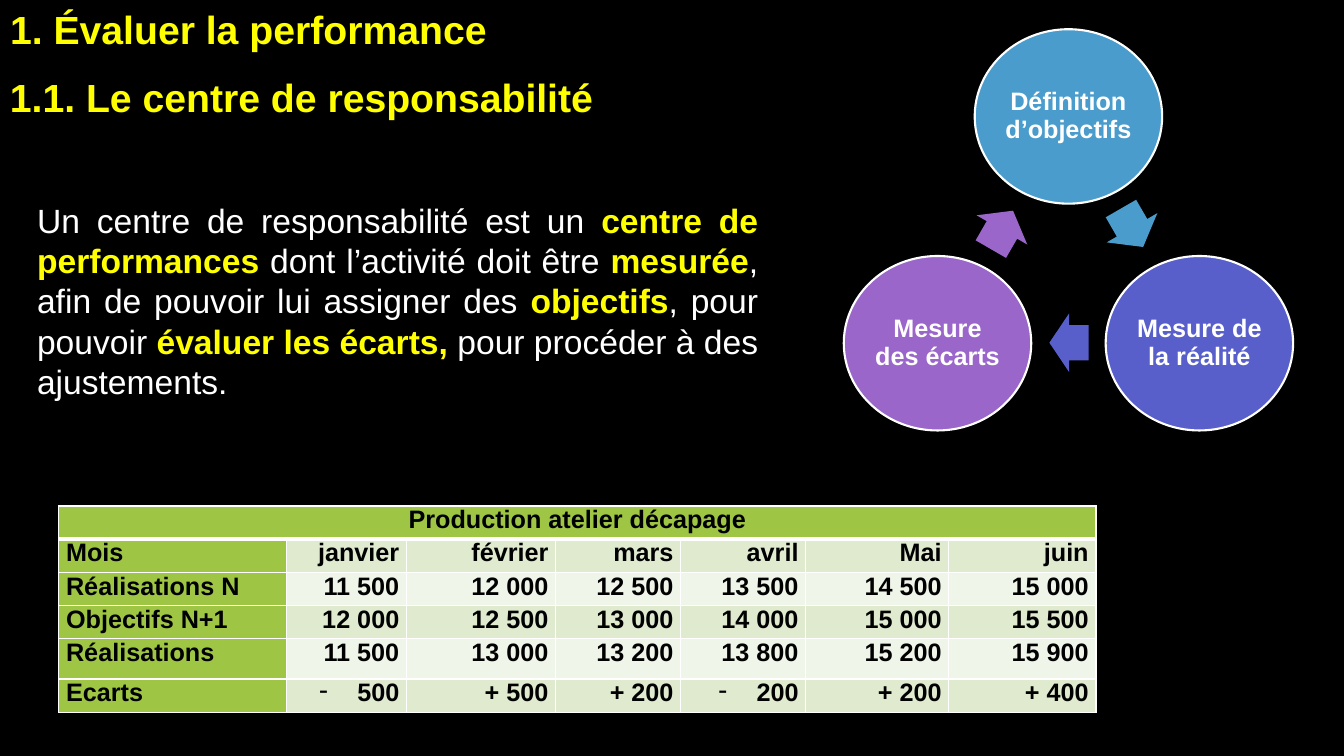
"""Build the slide on responsibility centres and their performance cycle."""
import math

from lxml import etree
from pptx import Presentation
from pptx.dml.color import RGBColor
from pptx.enum.shapes import MSO_SHAPE
from pptx.enum.text import MSO_ANCHOR, MSO_AUTO_SIZE, PP_ALIGN
from pptx.oxml.ns import qn
from pptx.util import Pt

ELLIPSE, ARROW = MSO_SHAPE.OVAL, MSO_SHAPE.RIGHT_ARROW
TOP, MIDDLE = MSO_ANCHOR.TOP, MSO_ANCHOR.MIDDLE
LEFT, CENTER = PP_ALIGN.LEFT, PP_ALIGN.CENTER
RIGHT, JUSTIFY = PP_ALIGN.RIGHT, PP_ALIGN.JUSTIFY
NO_AUTOFIT = MSO_AUTO_SIZE.NONE

BLACK = RGBColor(0x00, 0x00, 0x00)
WHITE = RGBColor(0xFF, 0xFF, 0xFF)
YELLOW = RGBColor(0xFF, 0xFF, 0x00)
BLUE = RGBColor(0x4A, 0x9C, 0xCC)
INDIGO = RGBColor(0x58, 0x5F, 0xCB)
PURPLE = RGBColor(0x9A, 0x66, 0xCA)
GREEN = RGBColor(0x9E, 0xC5, 0x44)
BANDS = RGBColor(0xF0, 0xF5, 0xE9), RGBColor(0xDF, 0xEA, 0xCF)

DEFINITION = [
    ("Un centre de responsabilité est un ", False),
    ("centre de performances ", True),
    ("dont l’activité doit être ", False),
    ("mesurée", True),
    (", afin de pouvoir lui assigner des ", False),
    ("objectifs", True),
    (", pour pouvoir ", False),
    ("évaluer les écarts, ", True),
    ("pour procéder à des ajustements.", False),
]

CYCLE_CENTER, CYCLE_RADIUS = (763.2, 191.2), 108
STAGE_SIZE = (133.9, 124.6)
STAGES = [
    ("Définition d’objectifs", BLUE, (808.6, 162.7), 31.7),
    ("Mesure de la réalité", INDIGO, (763.6, 244.8), 28.1),
    ("Mesure des écarts", PURPLE, (715.7, 164.2), 31.7),
]
ARROW_HEIGHT = 41.8

COLUMN_WIDTHS = [162.7, 85.7, 106.6, 89.3, 89.3, 102.2, 105.1]
ROW_HEIGHTS = [23.7, 23.7, 23.7, 23.7, 28.9, 23.7]
TABLE_TITLE = "Production atelier décapage"
PRODUCTION = [
    ["Mois", "janvier", "février", "mars", "avril", "Mai", "juin"],
    ["Réalisations N", "11 500", "12 000", "12 500", "13 500", "14 500", "15 000"],
    ["Objectifs N+1", "12 000", "12 500", "13 000", "14 000", "15 000", "15 500"],
    ["Réalisations", "11 500", "13 000", "13 200", "13 800", "15 200", "15 900"],
    ["Ecarts", "- 500", "+ 500", "+ 200", "- 200", "+ 200", "+ 400"],
]


def add_span(para, text, size, color, bold=True):
    """Append one formatted run to a paragraph."""
    span = para.add_run()
    span.text = text
    span.font.name = "Arial"
    span.font.size = Pt(size)
    span.font.bold = bold
    span.font.color.rgb = color


def place(shape, left, top, width, height):
    """Set the position and size of a shape."""
    shape.left, shape.top = Pt(left), Pt(top)
    shape.width, shape.height = Pt(width), Pt(height)


def write_heading(box, text):
    """Write a yellow heading at the top left of a box."""
    frame = box.text_frame
    frame.word_wrap = True
    frame.auto_size = NO_AUTOFIT
    frame.vertical_anchor = TOP
    para = frame.paragraphs[0]
    para.alignment = LEFT
    add_span(para, text, 28, YELLOW)


def add_definition(page):
    """Add the justified paragraph with its highlighted terms."""
    box = page.shapes.add_textbox(Pt(19.4), Pt(139), Pt(529.2), Pt(152.6))
    box.text_frame.word_wrap = True
    para = box.text_frame.paragraphs[0]
    para.alignment = JUSTIFY
    para.space_before = para.space_after = Pt(6)
    for text, key in DEFINITION:
        add_span(para, text, 24, YELLOW if key else WHITE, key)


def add_filled_shape(page, kind, center, size, color):
    """Add a plain filled preset shape around a centre point."""
    (x, y), (width, height) = center, size
    shape = page.shapes.add_shape(
        kind, Pt(x - width / 2), Pt(y - height / 2), Pt(width), Pt(height))
    shape.shadow.inherit = False
    shape.fill.solid()
    shape.fill.fore_color.rgb = color
    shape.line.fill.background()
    return shape


def add_stage(page, text, center, color):
    """Add one labelled ellipse of the cycle."""
    stage = add_filled_shape(page, ELLIPSE, center, STAGE_SIZE, color)
    stage.line.color.rgb = WHITE
    stage.line.width = Pt(1.5)
    frame = stage.text_frame
    frame.word_wrap = True
    frame.vertical_anchor = MIDDLE
    frame.margin_left = frame.margin_right = Pt(0)
    frame.margin_top = frame.margin_bottom = Pt(2.4)
    para = frame.paragraphs[0]
    para.alignment = CENTER
    para.line_spacing = 0.9
    add_span(para, text, 18, WHITE)


def add_cycle(page):
    """Add the three stages on a circle and the arrows between them."""
    for index, (text, color, arrow_center, arrow_width) in enumerate(STAGES):
        angle = math.radians(120 * index - 90)
        center = (CYCLE_CENTER[0] + CYCLE_RADIUS * math.cos(angle),
                  CYCLE_CENTER[1] + CYCLE_RADIUS * math.sin(angle))
        add_stage(page, text, center, color)
        arrow = add_filled_shape(
            page, ARROW, arrow_center, (arrow_width, ARROW_HEIGHT), color)
        arrow.adjustments[0], arrow.adjustments[1] = 0.6, 0.5
        arrow.rotation = 60 + 120 * index


def set_borders(cell, top, bottom):
    """Draw white cell borders, with given top and bottom widths."""
    properties = cell._tc.get_or_add_tcPr()
    for tag, width in (("lnL", 1), ("lnR", 1), ("lnT", top), ("lnB", bottom)):
        line = etree.SubElement(properties, qn("a:" + tag), w=str(Pt(width)))
        fill = etree.SubElement(line, qn("a:solidFill"))
        etree.SubElement(fill, qn("a:srgbClr"), val=str(WHITE))


def set_dash_bullet(para):
    """Give a paragraph a hanging dash bullet."""
    properties = para._p.get_or_add_pPr()
    properties.set("marL", str(Pt(27)))
    properties.set("indent", str(Pt(-27)))
    etree.SubElement(properties, qn("a:buFontTx"))
    etree.SubElement(properties, qn("a:buChar"), char="-")


def fill_cell(cell, text, align, color):
    """Write and colour one table cell."""
    cell.margin_left = cell.margin_right = Pt(5.2)
    cell.margin_top = cell.margin_bottom = Pt(0)
    cell.fill.solid()
    cell.fill.fore_color.rgb = color
    para = cell.text_frame.paragraphs[0]
    para.alignment = align
    para.space_before = Pt(6)
    if text.startswith("- "):
        set_dash_bullet(para)
        text = text[2:]
    add_span(para, text, 18, BLACK)


def add_production_table(page):
    """Add the monthly production table."""
    table = page.shapes.add_table(
        len(ROW_HEIGHTS), len(COLUMN_WIDTHS), Pt(42), Pt(361.4),
        Pt(sum(COLUMN_WIDTHS)), Pt(sum(ROW_HEIGHTS))).table
    table.first_row = table.horz_banding = False
    for column, width in zip(table.columns, COLUMN_WIDTHS):
        column.width = Pt(width)
    for index, (row, height) in enumerate(zip(table.rows, ROW_HEIGHTS)):
        row.height = Pt(height)
        for cell in row.cells:
            set_borders(cell, 3 if index == 1 else 1, 3 if index == 0 else 1)
    table.cell(0, 0).merge(table.cell(0, len(COLUMN_WIDTHS) - 1))
    fill_cell(table.cell(0, 0), TABLE_TITLE, CENTER, GREEN)
    for row, values in enumerate(PRODUCTION, 1):
        for column, text in enumerate(values):
            align, color = (RIGHT, BANDS[row % 2]) if column else (LEFT, GREEN)
            fill_cell(table.cell(row, column), text, align, color)


def main():
    """Build and save the deck."""
    deck = Presentation()
    deck.slide_width, deck.slide_height = Pt(960), Pt(540)
    page = deck.slides.add_slide(deck.slide_layouts[5])
    page.background.fill.solid()
    page.background.fill.fore_color.rgb = BLACK
    title = page.shapes.title
    place(title, 0, 0, 787.7, 41)
    write_heading(title, "1. Évaluer la performance")
    add_definition(page)
    add_production_table(page)
    add_cycle(page)
    subtitle = page.shapes.add_textbox(Pt(0), Pt(49), Pt(435.6), Pt(41))
    write_heading(subtitle, "1.1. Le centre de responsabilité")
    deck.save("out.pptx")


if __name__ == "__main__":
    main()
